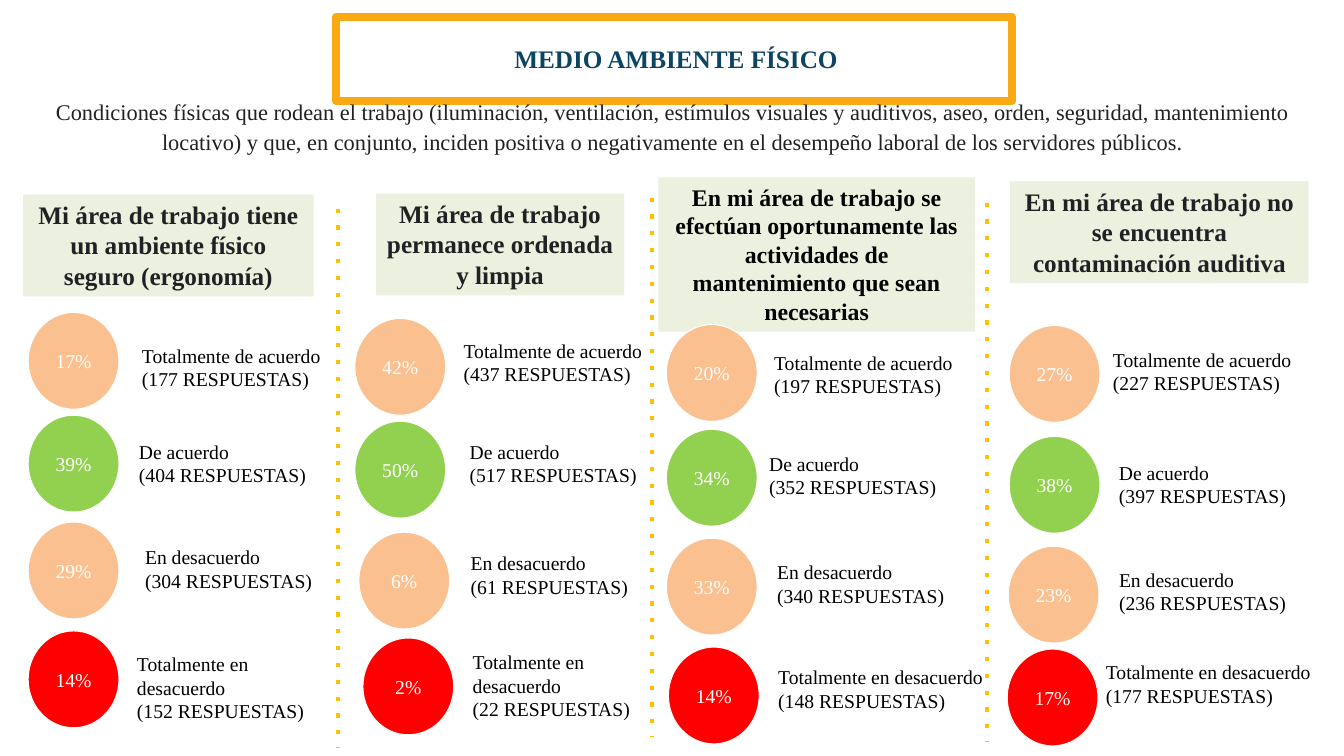
from lxml import etree
from pptx import Presentation
from pptx import util as u
from pptx.dml.color import RGBColor
from pptx.enum import shapes, text
from pptx.oxml.ns import qn

PX = 9144  # EMU in one px, 100 px to the inch
COLORS = {
    "frame": "F8A913", "title": "0C4563", "body": "202124", "black": "000000",
    "white": "FFFFFF", "divider": "FFC000", "header": "EBF1DE",
    "peach": "FAC090", "green": "92D050", "red": "FF0000",
}
CENTER, LEFT = text.PP_ALIGN.CENTER, text.PP_ALIGN.LEFT
TOP, MIDDLE = text.MSO_ANCHOR.TOP, text.MSO_ANCHOR.MIDDLE


class SurveySlide:
    font = "Times New Roman"

    def __init__(self, slide):
        self.shapes = slide.shapes

    def color(self, name):
        return RGBColor.from_string(COLORS[name])

    def set_text(self, holder, lines, size, color, bold=False, align=CENTER,
                 anchor=TOP, inset=10, spacing=None):
        """Fill a shape or text box, one paragraph for each line."""
        frame = holder.text_frame
        frame.word_wrap = True
        frame.vertical_anchor = anchor
        frame.margin_left = frame.margin_right = 10 * PX
        frame.margin_top = frame.margin_bottom = inset * PX
        frame.text = "\n".join(lines)
        for paragraph in frame.paragraphs:
            paragraph.alignment = align
            if spacing:
                paragraph.line_spacing = spacing
            font = paragraph.font
            font.name, font.size, font.bold = self.font, u.Pt(size), bold
            font.color.rgb = self.color(color)

    def shape(self, kind, box, fill=None, line=None, width=0):
        item = self.shapes.add_shape(kind, *(n * PX for n in box))
        item.shadow.inherit = False
        if fill:
            item.fill.solid()
            item.fill.fore_color.rgb = self.color(fill)
        else:
            item.fill.background()
        if line:
            item.line.color.rgb = self.color(line)
            item.line.width = u.Pt(width)
        else:
            item.line.fill.background()
        return item

    def frame(self, box):
        self.shape(shapes.MSO_SHAPE.RECTANGLE, box, line="frame", width=6)

    def text_box(self, box, lines, size, color, **style):
        item = self.shapes.add_textbox(*(n * PX for n in box))
        self.set_text(item, lines, size, color, **style)

    def header(self, box, question, size, color):
        item = self.shape(shapes.MSO_SHAPE.RECTANGLE, box, fill="header")
        self.set_text(item, [question], size, color, bold=True, inset=5)

    def circle(self, left, top, percent, fill):
        item = self.shape(shapes.MSO_SHAPE.OVAL, (left, top, 90, 96),
                          fill=fill, line="white", width=0.75)
        self.set_text(item, [f"{percent}%"], 14, "white", anchor=MIDDLE)

    def answer(self, left, top, width, label, count):
        self.text_box((left, top, width, 67), [label, f"({count} RESPUESTAS)"],
                      14, "black", align=LEFT)

    def divider(self, x, top, height):
        line = self.shapes.add_connector(
            shapes.MSO_CONNECTOR.STRAIGHT, x * PX, top * PX, x * PX, (top + height) * PX)
        line.line.color.rgb = self.color("divider")
        line.line.width = u.Pt(3)
        properties = line._element.spPr
        etree.SubElement(properties.find(qn("a:ln")), qn("a:prstDash"), val="dot")
        etree.SubElement(properties, qn("a:effectLst"))


SCALE = [
    ("Totalmente de acuerdo", "peach"),
    ("De acuerdo", "green"),
    ("En desacuerdo", "peach"),
    ("Totalmente en desacuerdo", "red"),
]

# Header: box, question, size, color.
# Results in SCALE order: percent, count, circle (left, top), label (left, top, width).
QUESTIONS = [
    (((23, 193, 288, 101),
      "Mi área de trabajo tiene un ambiente físico seguro (ergonomía)", 18, "body"),
     [(17, 177, (28, 310), (131, 331, 218)),
      (39, 404, (28, 412), (128, 426, 218)),
      (29, 304, (28, 518), (134, 531, 218)),
      (14, 152, (28, 626), (126, 637, 218))]),
    (((373, 192, 246, 101),
      "Mi área de trabajo permanece ordenada y limpia", 18, "body"),
     [(42, 437, (352, 316), (450, 326, 234)),
      (50, 517, (352, 418), (456, 426, 243)),
      (6, 61, (356, 528), (457, 537, 218)),
      (2, 22, (360, 633), (459, 635, 218))]),
    (((653, 176, 314, 153),
      "En mi área de trabajo se efectúan oportunamente las actividades de "
      "mantenimiento que sean necesarias", 17, "black"),
     [(20, 197, (661, 322), (758, 338, 234)),
      (34, 352, (661, 426), (753, 438, 243)),
      (33, 340, (661, 534), (761, 546, 218)),
      (14, 148, (663, 642), (762, 650, 258))]),
    (((1002, 180, 296, 101),
      "En mi área de trabajo no se encuentra contaminación auditiva", 18, "body"),
     [(27, 227, (1001, 323), (1094, 335, 234)),
      (38, 397, (1001, 433), (1100, 447, 243)),
      (23, 236, (1000, 542), (1100, 553, 218)),
      (17, 177, (999, 644), (1087, 645, 257))]),
]
DIVIDERS = [(335, 207), (647, 196), (979, 201)]


def main():
    deck = Presentation()
    deck.slide_width, deck.slide_height = 1333 * PX, 750 * PX
    survey = SurveySlide(deck.slides.add_slide(deck.slide_layouts[6]))

    survey.frame((333, 17, 671, 83))
    survey.text_box((335, 26, 671, 68), ["MEDIO AMBIENTE FÍSICO"], 18, "title",
                    bold=True, anchor=MIDDLE, inset=5, spacing=0.9)
    survey.text_box(
        (6, 83, 1322, 116),
        ["Condiciones físicas que rodean el trabajo (iluminación, ventilación, estímulos "
         "visuales y auditivos, aseo, orden, seguridad, mantenimiento locativo) y que, en "
         "conjunto, inciden positiva o negativamente en el desempeño laboral de los "
         "servidores públicos."],
        16, "body", spacing=1.15)

    for x, top in DIVIDERS:
        survey.divider(x, top, 535)
    for header, results in QUESTIONS:
        survey.header(*header)
        for (label, fill), (percent, count, circle, place) in zip(SCALE, results):
            survey.circle(*circle, percent, fill)
            survey.answer(*place, label, count)

    deck.save("out.pptx")


if __name__ == "__main__":
    main()
